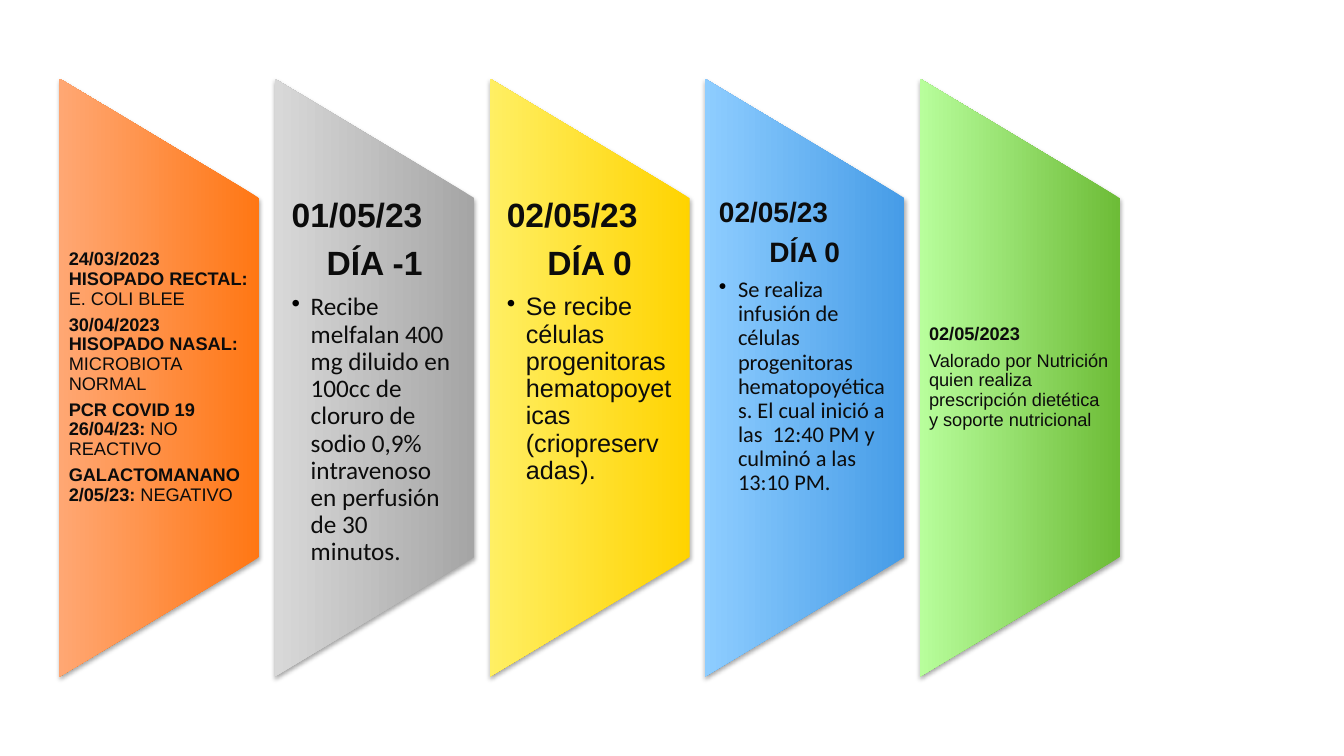
from lxml import etree
from pptx import Presentation
from pptx.dml.color import RGBColor
from pptx.enum.shapes import MSO_SHAPE
from pptx.enum.text import MSO_ANCHOR, PP_ALIGN
from pptx.oxml.ns import qn
from pptx.util import Cm, Pt

PANEL_LEFT, PANEL_TOP = 1.5, 1.98
PANEL_WIDTH, PANEL_HEIGHT = 5.04, 15.07
PANEL_STEP = 5.42
INK = "0C0C0C"

EVENTS = [
    ("FF7714", "FFA773", 13, [
        ("24/03/2023 HISOPADO RECTAL: ", "E. COLI BLEE"),
        ("30/04/2023 HISOPADO NASAL: ", "MICROBIOTA NORMAL"),
        ("PCR COVID 19 26/04/23: ", "NO REACTIVO"),
        ("GALACTOMANANO 2/05/23: ", "NEGATIVO"),
    ], None),
    ("A5A5A5", "D8D8D8", 24, [("01/05/23", ""), ("DÍA -1", "")],
     ("Recibe melfalan 400 mg diluido en 100cc de cloruro de sodio 0,9% "
      "intravenoso en perfusión de 30 minutos.", 18, "Calibri")),
    ("FFD300", "FFEF63", 24, [("02/05/23", ""), ("DÍA 0", "")],
     ("Se recibe células progenitoras hematopoyeticas (criopreservadas).",
      18, "Arial")),
    ("469CE7", "8ECDFF", 20, [("02/05/23", ""), ("DÍA 0", "")],
     ("Se realiza infusión de células progenitoras hematopoyéticas. "
      "El cual inició a las  12:40 PM y culminó a las 13:10 PM.",
      16, "Calibri")),
    ("6DBC37", "B8FE9C", 13, [
        ("02/05/2023", ""),
        ("", "Valorado por Nutrición quien realiza prescripción dietética "
             "y soporte nutricional"),
    ], None),
]


def color(hex_string):
    return RGBColor.from_string(hex_string)


def add_soft_shadow(shape):
    shape.shadow.inherit = False
    effects = shape._element.spPr.find(qn("a:effectLst"))
    shadow = etree.SubElement(effects, qn("a:outerShdw"), blurRad="40000",
                              dist="23000", dir="5400000", rotWithShape="0")
    black = etree.SubElement(shadow, qn("a:srgbClr"), val="000000")
    etree.SubElement(black, qn("a:alpha"), val="35000")


def add_bullet(paragraph):
    paragraph.level = 1
    properties = paragraph._p.get_or_add_pPr()
    properties.set("marL", str(Cm(0.48)))
    properties.set("indent", str(-Cm(0.48)))
    bullet_color = etree.SubElement(properties, qn("a:buClr"))
    etree.SubElement(bullet_color, qn("a:srgbClr"), val="000000")
    etree.SubElement(properties, qn("a:buChar"), char="•")


def format_run(run, size, font_name, bold):
    run.font.size = Pt(size)
    run.font.name = font_name
    run.font.bold = bold
    run.font.color.rgb = color(INK)


def add_panel(slide, left, top, width, height, dark, light):
    panel = slide.shapes.add_shape(
        MSO_SHAPE.FLOWCHART_MANUAL_OPERATION,
        Cm(left + (width - height) / 2), Cm(top + (height - width) / 2),
        Cm(height), Cm(width))
    panel.rotation = 270
    panel.fill.gradient()
    panel.fill.gradient_angle = 90
    for stop, shade in zip(panel.fill.gradient_stops, (dark, light)):
        stop.color.rgb = color(shade)
    panel.line.fill.background()
    add_soft_shadow(panel)


def add_event_text(slide, left, top, width, height, size, entries, detail):
    box = slide.shapes.add_textbox(Cm(left), Cm(top), Cm(width), Cm(height))
    frame = box.text_frame
    frame.word_wrap = True
    frame.vertical_anchor = MSO_ANCHOR.TOP if detail else MSO_ANCHOR.MIDDLE
    frame.margin_left = frame.margin_right = Cm(size * 0.018)
    frame.margin_top = frame.margin_bottom = 0

    def next_paragraph(index):
        paragraph = frame.add_paragraph() if index else frame.paragraphs[0]
        paragraph.line_spacing = 0.9
        if index:
            paragraph.space_before = Pt(size * 0.35)
        return paragraph

    for index, (heading, result) in enumerate(entries):
        paragraph = next_paragraph(index)
        paragraph.text = heading or result
        format_run(paragraph.runs[0], size, "Arial", bool(heading))
        if heading and result:
            result_run = paragraph.add_run()
            result_run.text = result
            format_run(result_run, size, "Arial", False)
        if detail and index:
            paragraph.alignment = PP_ALIGN.CENTER

    if detail:
        description, detail_size, font_name = detail
        paragraph = next_paragraph(len(entries))
        add_bullet(paragraph)
        paragraph.text = description
        format_run(paragraph.runs[0], detail_size, font_name, False)


def add_event(slide, left, top, width, height, event):
    dark, light, size, entries, detail = event
    add_panel(slide, left, top, width, height, dark, light)
    add_event_text(slide, left, top + height / 5, width, height * 0.6,
                   size, entries, detail)


def main():
    presentation = Presentation()
    presentation.slide_width = Cm(33.87)
    presentation.slide_height = Cm(19.05)
    slide = presentation.slides.add_slide(presentation.slide_layouts[6])
    for position, event in enumerate(EVENTS):
        add_event(slide, PANEL_LEFT + position * PANEL_STEP, PANEL_TOP,
                  PANEL_WIDTH, PANEL_HEIGHT, event)
    presentation.save("out.pptx")


if __name__ == "__main__":
    main()
